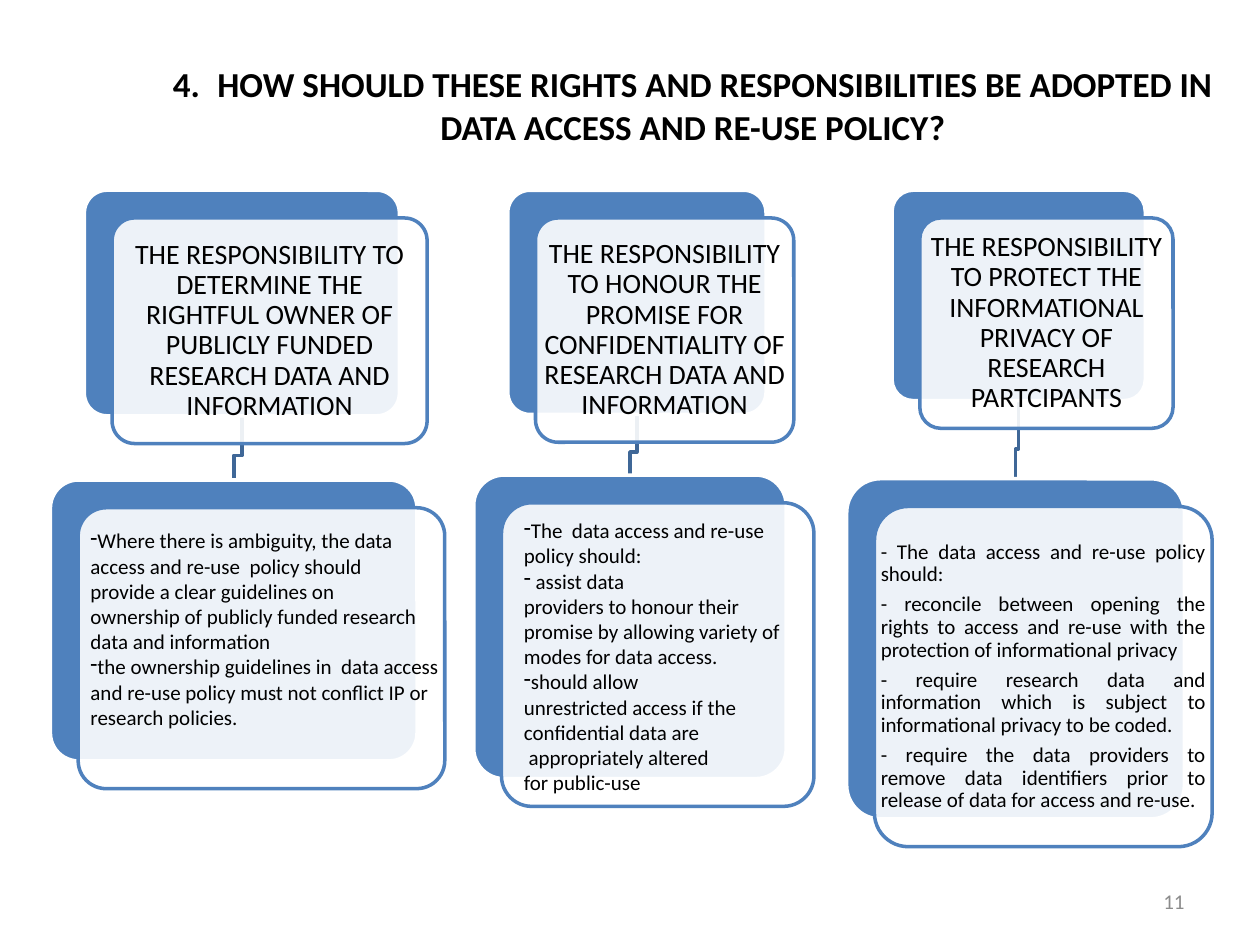
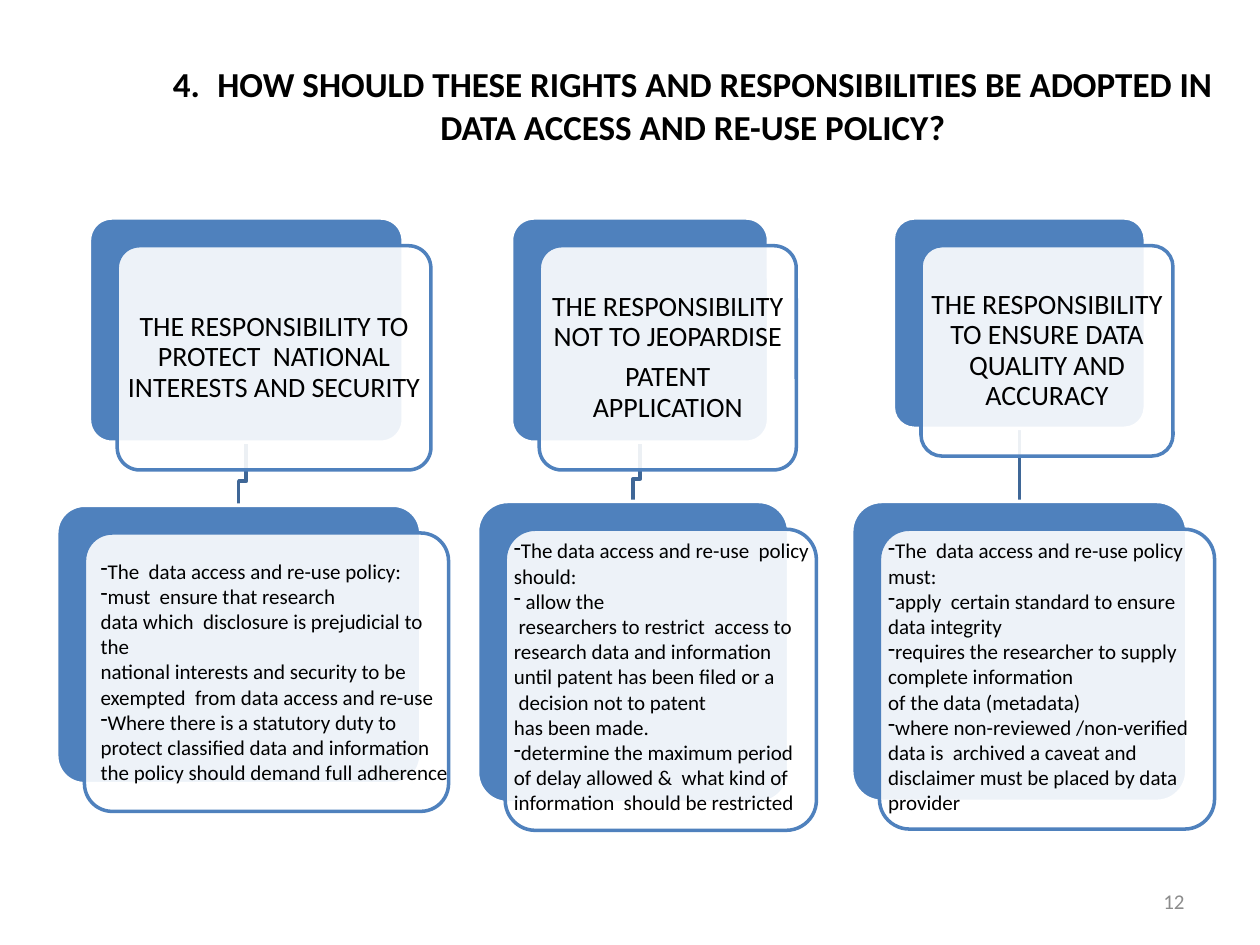
from dataclasses import dataclass
from lxml.etree import SubElement
from pptx import Presentation
from pptx.dml.color import RGBColor
from pptx.enum.shapes import MSO_SHAPE as SHAPE
from pptx.enum.text import MSO_ANCHOR as ANCHOR, PP_ALIGN as ALIGN
from pptx.oxml.ns import qn
from pptx.util import Inches, Pt

WIDTH, HEIGHT = Inches(10), Inches(7.5)
CELL = WIDTH / 10
COLORS = {"blue": "4F81BD", "link": "3F6797", "white": "FFFFFF",
          "text": "000000", "number": "8C8C8C"}
FONT = "Calibri"
SHIFT = 0.22
BEND = 0.62
TITLE = [("4. ", 20), (" ", 24),
         ("HOW SHOULD THESE RIGHTS AND RESPONSIBILITIES BE ADOPTED IN "
          "DATA ACCESS AND RE-USE POLICY?", 20)]


@dataclass
class Column:
    head: tuple
    body: tuple
    duty: str
    policy: str
    policy_box: tuple = None


SLIDES = {
    11: [
        Column((0.67, 1.51, 2.5, 1.79), (0.4, 3.81, 2.91, 2.23),
               "THE RESPONSIBILITY TO DETERMINE THE RIGHTFUL OWNER OF "
               "PUBLICLY FUNDED RESEARCH DATA AND INFORMATION",
               """-Where there is ambiguity, the data
access and re-use  policy should
provide a clear guidelines on
ownership of publicly funded research
data and information
-the ownership guidelines in  data access
and re-use policy must not conflict IP or
research policies.""", (0.62, 4.14, 3.03, 1.72)),
        Column((4.03, 1.51, 2.05, 1.78), (3.76, 3.77, 2.48, 2.41),
               "THE RESPONSIBILITY TO HONOUR THE PROMISE FOR "
               "CONFIDENTIALITY OF RESEARCH DATA AND INFORMATION",
               """-The  data access and re-use
policy should:
- assist data
providers to honour their
promise by allowing variety of
modes for data access.
-should allow
unrestricted access if the
confidential data are
 appropriately altered
for public-use""", (4.06, 4.06, 2.29, 2.52)),
        Column((7.08, 1.51, 2.01, 1.67), (6.72, 3.8, 2.68, 2.7),
               "THE RESPONSIBILITY TO PROTECT THE INFORMATIONAL "
               "PRIVACY OF RESEARCH PARTCIPANTS",
               "- The data access and re-use policy should:\n"
               "- reconcile between opening the rights to access and re-use "
               "with the protection of informational privacy\n"
               "- require research data and information which is subject to "
               "informational privacy to be coded.\n"
               "- require the data providers to remove data identifiers prior "
               "to release of data for access and re-use."),
    ],
    12: [
        Column((0.71, 1.73, 2.49, 1.78), (0.45, 4.01, 2.89, 2.21),
               "THE RESPONSIBILITY TO PROTECT  NATIONAL INTERESTS AND SECURITY",
               """-The  data access and re-use policy:
-must  ensure that research
data which  disclosure is prejudicial to
the
national interests and security to be
exempted  from data access and re-use
-Where there is a statutory duty to
protect classified data and information
the policy should demand full adherence""", (0.7, 4.38, 2.98, 2.12)),
        Column((4.06, 1.73, 2.04, 1.78), (3.79, 3.98, 2.47, 2.39),
               "THE RESPONSIBILITY NOT TO JEOPARDISE\nPATENT APPLICATION",
               """-The data access and re-use  policy
should:
- allow the
 researchers to restrict  access to
research data and information
until patent has been filed or a
 decision not to patent
has been made.
-determine the maximum period
of delay allowed &  what kind of
information  should be restricted""", (3.98, 4.22, 2.61, 2.32)),
        Column((7.09, 1.73, 2, 1.67), (6.76, 3.98, 2.66, 2.38),
               "THE RESPONSIBILITY TO ENSURE DATA QUALITY AND ACCURACY",
               """-The  data access and re-use policy
must:
-apply  certain standard to ensure
data integrity
-requires the researcher to supply
complete information
of the data (metadata)
-where non-reviewed /non-verified
data is  archived a caveat and
disclaimer must be placed by data
provider""", (6.95, 4.22, 2.68, 2.32)),
    ],
}


def rgb(name):
    return RGBColor.from_string(COLORS[name])


def cells(*values):
    return [round(v * CELL) for v in values]


def shifted(box):
    x, y, w, h = box
    return x + SHIFT, y + SHIFT, w, h


def style_font(font, size, color="text", bold=False):
    font.name, font.size, font.bold = FONT, Pt(size), bold
    font.color.rgb = rgb(color)


def add_frame(s, box, anchor=ANCHOR.TOP, inset=None):
    tf = s.shapes.add_textbox(*cells(*box)).text_frame
    tf.word_wrap = True
    tf.vertical_anchor = anchor
    if inset is not None:
        tf.margin_left = tf.margin_right = Inches(inset)
        tf.margin_top = tf.margin_bottom = Inches(inset)
    return tf


def add_lines(tf, text, size, align, color="text"):
    for i, line in enumerate(text.split("\n")):
        p = tf.paragraphs[0] if i == 0 else tf.add_paragraph()
        p.text = line
        p.alignment = align
        style_font(p.font, size, color)
    return tf.paragraphs


def add_card_text(s, box, text, size, align, inset):
    tf = add_frame(s, box, ANCHOR.MIDDLE, inset)
    for p in add_lines(tf, text, size, align):
        p.line_spacing = 0.9
        p.space_after = Pt(0.35 * size)


def add_dashed_list(s, box, text):
    for p in add_lines(add_frame(s, box), text, 12, ALIGN.JUSTIFY):
        if p.text.startswith("-"):
            p.runs[0].text = p.text[1:]
            pPr = p._p.get_or_add_pPr()
            pPr.set("marL", "0")
            pPr.set("indent", "0")
            bullet = pPr.makeelement(qn("a:buChar"), {"char": "-"})
            pPr.insert_element_before(bullet, "a:tabLst", "a:defRPr", "a:extLst")


def add_round_rect(s, box, fill, line, opacity=None):
    sp = s.shapes.add_shape(SHAPE.ROUNDED_RECTANGLE, *cells(*box))
    sp.adjustments[0] = 0.1
    sp.shadow.inherit = False
    sp.fill.solid()
    sp.fill.fore_color.rgb = rgb(fill)
    sp.line.color.rgb = rgb(line)
    sp.line.width = Pt(2)
    if opacity:
        color = sp._element.spPr.find(qn("a:solidFill"))[0]
        SubElement(color, qn("a:alpha"), val=str(opacity * 1000))


def add_card(s, box):
    add_round_rect(s, box, "blue", "white")
    add_round_rect(s, shifted(box), "white", "blue", 90)


def add_link(s, head, body):
    x1, y1 = head[0] + head[2] / 2, head[1] + head[3]
    x2, y2 = body[0] + body[2] / 2, body[1]
    bend = y1 + BEND * (y2 - y1)
    builder = s.shapes.build_freeform(*cells(x1, y1))
    points = [(x1, bend), (x2, bend), (x2, y2)]
    builder.add_line_segments([cells(*pt) for pt in points], close=False)
    sp = builder.convert_to_shape()
    sp.shadow.inherit = False
    sp.fill.background()
    sp.line.color.rgb = rgb("link")
    sp.line.width = Pt(2)


def add_title(s):
    p = add_frame(s, (1, 0.39, 9, 1.25)).paragraphs[0]
    p.alignment = ALIGN.CENTER
    for text, size in TITLE:
        r = p.add_run()
        r.text = text
        style_font(r.font, size, bold=True)


def add_number(s, number):
    tf = add_frame(s, (7.17, 6.95, 2.33, 0.4), ANCHOR.MIDDLE)
    add_lines(tf, str(number), 12, ALIGN.RIGHT, "number")


def add_column(s, col):
    add_link(s, col.head, col.body)
    add_card(s, col.head)
    add_card_text(s, shifted(col.head), col.duty, 16, ALIGN.CENTER, 0.07)
    add_card(s, col.body)
    if col.policy_box:
        add_dashed_list(s, col.policy_box, col.policy)
    else:
        add_card_text(s, shifted(col.body), col.policy, 12, ALIGN.JUSTIFY, 0.05)


def main():
    prs = Presentation()
    prs.slide_width, prs.slide_height = WIDTH, HEIGHT
    for number, columns in SLIDES.items():
        s = prs.slides.add_slide(prs.slide_layouts[6])
        add_number(s, number)
        add_title(s)
        for col in columns:
            add_column(s, col)
    prs.save("out.pptx")


if __name__ == "__main__":
    main()
